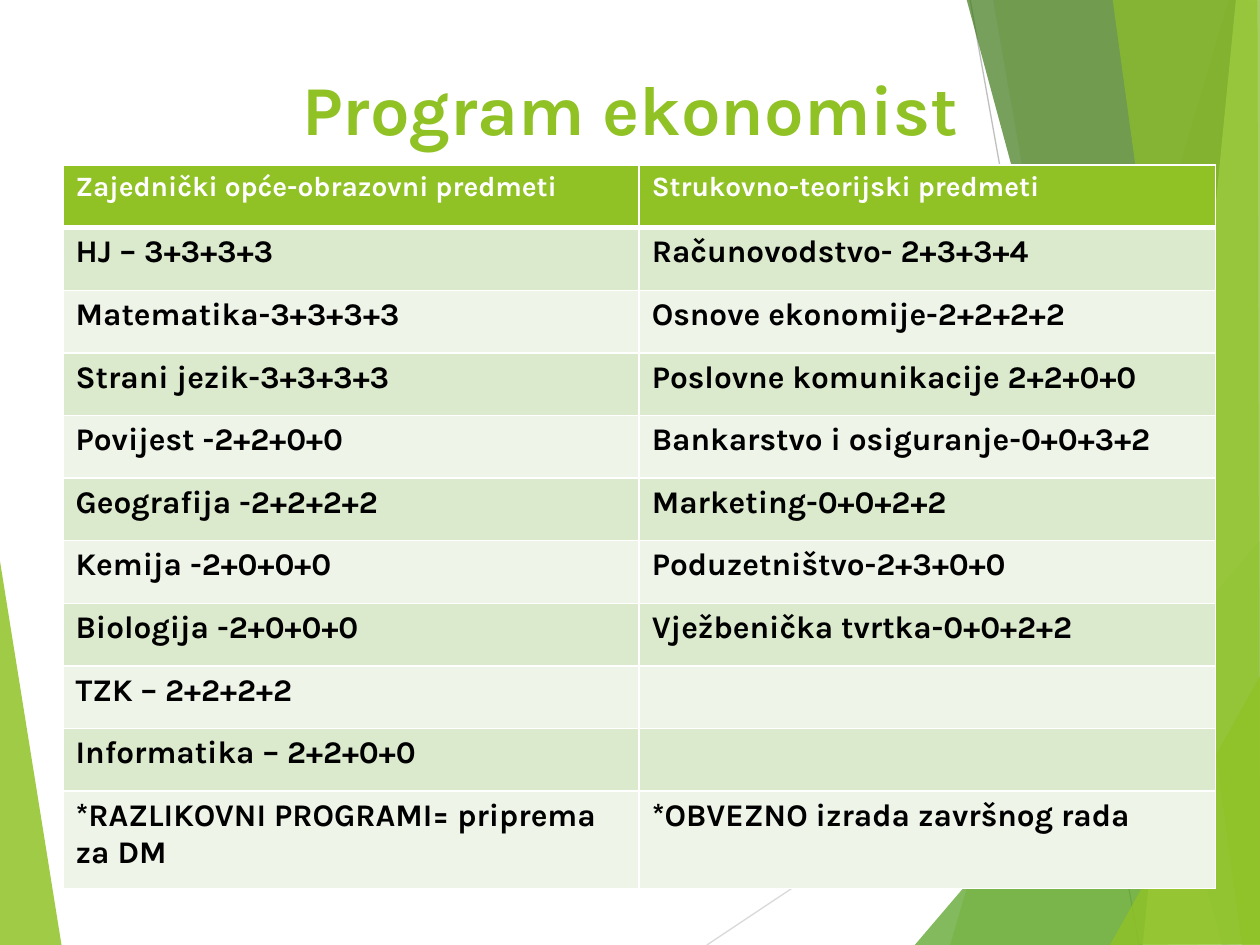
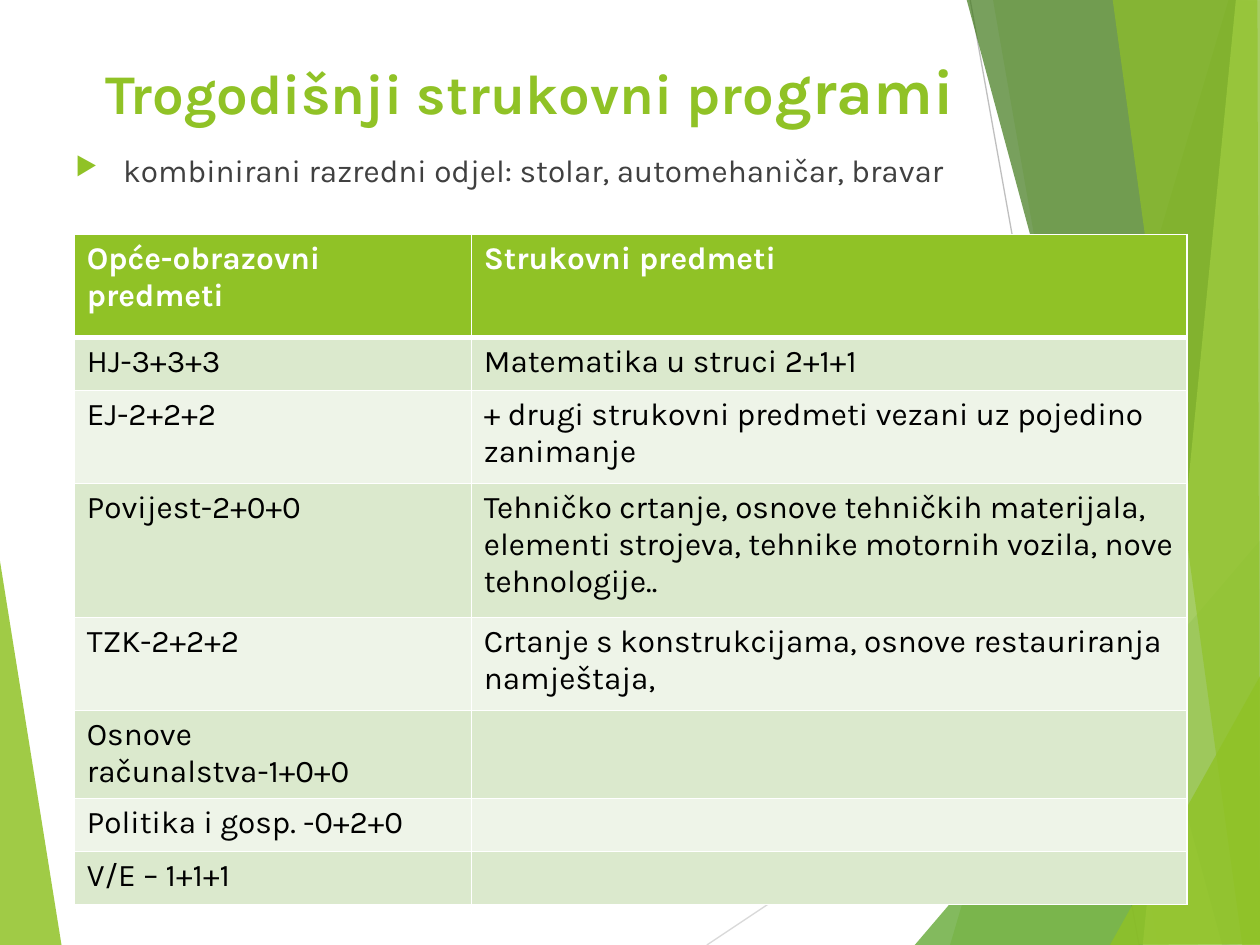
from dataclasses import dataclass

from lxml import etree
from pptx import Presentation
from pptx.dml.color import RGBColor
from pptx.enum.shapes import MSO_CONNECTOR
from pptx.enum.text import MSO_ANCHOR, MSO_AUTO_SIZE, PP_ALIGN
from pptx.oxml.ns import qn
from pptx.util import Inches, Pt

STRAIGHT = MSO_CONNECTOR.STRAIGHT
TOP = MSO_ANCHOR.TOP
NO_AUTOFIT = MSO_AUTO_SIZE.NONE
CENTER = PP_ALIGN.CENTER

# The slide is a grid of 100 columns by 75 rows; every length counts cells.
WIDTH, HEIGHT = Inches(10), Inches(7.5)
CELL = WIDTH / 100
TITLE_ONLY = 5

FONT = "Karla"
GREEN, MID_GREEN, DARK_GREEN, PALE_GREEN = "90C226", "54A021", "3F7819", "C0E474"
BAND_FILLS = ("EEF4E8", "DBE9CD")
WHITE, BLACK, BODY_GRAY = "FFFFFF", "000000", "404040"


@dataclass(frozen=True)
class Facet:
    points: tuple[tuple[float, float], ...]
    color: str
    opacity: int


@dataclass(frozen=True)
class Ray:
    start: tuple[float, float]
    end: tuple[float, float]
    color: str


@dataclass(frozen=True)
class Subjects:
    """A table of subjects: its place on the grid, its cells and their format."""
    left: float
    top: float
    columns: tuple[float, ...]
    rows: tuple[float, ...]
    cells: tuple[tuple[str, str], ...]
    header_size: int
    body_bold: bool


DECORATION = (
    Facet(((-0.1, 43.9), (4.9, 75.1), (-0.1, 75)), GREEN, 85),
    Ray((56.1, 75), (100.1, 45.7), "D9D9D9"),
    Ray((77, 0), (90.4, 75), "BFBFBF"),
    Facet(((97.5, 0), (75.4, 75), (100.2, 75.1), (100.1, 0.1)), GREEN, 30),
    Facet(((78.8, -0.1), (91.9, 75), (100.1, 75), (100.1, -0.1)), GREEN, 20),
    Facet(((72.6, 75), (100, 42.9), (100.1, 75)), MID_GREEN, 72),
    Facet(((76.7, -0.1), (97, 75), (100.1, 74.9), (100.1, -0.1)), DARK_GREEN, 70),
    Facet(((98.1, -0.1), (90.7, 75), (100.1, 75), (100, -0.1)), PALE_GREEN, 70),
    Facet(((88.3, -0.1), (98.6, 75), (100, 75), (99.8, -0.1)), GREEN, 65),
    Facet(((88.1, 75), (100.1, 53.5), (100.1, 74.9)), GREEN, 80),
)

ECONOMIST = Subjects(
    left=5, top=13.1, columns=(45.73, 45.73), rows=(4.97,) * 10 + (7.75,),
    header_size=16, body_bold=True,
    cells=(
        ("Zajednički opće-obrazovni predmeti", "Strukovno-teorijski predmeti"),
        ("HJ – 3+3+3+3", "Računovodstvo- 2+3+3+4"),
        ("Matematika-3+3+3+3", "Osnove ekonomije-2+2+2+2"),
        ("Strani jezik-3+3+3+3", "Poslovne komunikacije 2+2+0+0"),
        ("Povijest -2+2+0+0", "Bankarstvo i osiguranje-0+0+3+2"),
        ("Geografija -2+2+2+2", "Marketing-0+0+2+2"),
        ("Kemija -2+0+0+0", "Poduzetništvo-2+3+0+0"),
        ("Biologija -2+0+0+0", "Vježbenička tvrtka-0+0+2+2"),
        ("TZK – 2+2+2+2", ""),
        ("Informatika – 2+2+0+0", ""),
        ("*RAZLIKOVNI PROGRAMI= priprema za DM", "*OBVEZNO izrada završnog rada"),
    ),
)

VOCATIONAL = Subjects(
    left=5.9, top=18.6, columns=(31.5, 56.8),
    rows=(8.2, 4.2, 7.4, 10.6, 7.4, 4.2, 4.2, 4.2),
    header_size=18, body_bold=False,
    cells=(
        ("Opće-obrazovni predmeti", "Strukovni predmeti"),
        ("HJ-3+3+3", "Matematika u struci 2+1+1"),
        ("EJ-2+2+2", "+ drugi strukovni predmeti vezani uz pojedino zanimanje"),
        ("Povijest-2+0+0", "Tehničko crtanje, osnove tehničkih materijala, elementi "
                           "strojeva, tehnike motornih vozila, nove tehnologije.."),
        ("TZK-2+2+2", "Crtanje s konstrukcijama, osnove restauriranja namještaja,"),
        ("Osnove računalstva-1+0+0", ""),
        ("Politika i gosp. -0+2+0", ""),
        ("V/E – 1+1+1", ""),
    ),
)


def grid(*cells: float) -> tuple[int, ...]:
    return tuple(round(cell * CELL) for cell in cells)


def rgb(color: str) -> RGBColor:
    return RGBColor.from_string(color)


def add_xml(parent, tag: str, **attributes: str):
    return etree.SubElement(parent, qn(tag), attributes)


def write(paragraph, text: str, *, size: int, color: str, bold: bool = False) -> None:
    run = paragraph.add_run()
    run.text = text
    run.font.name = FONT
    run.font.size = Pt(size)
    run.font.bold = bold
    run.font.color.rgb = rgb(color)


def draw_facet(slide, facet: Facet):
    first, *others = [grid(*point) for point in facet.points]
    builder = slide.shapes.build_freeform(*first)
    builder.add_line_segments(others, close=True)
    shape = builder.convert_to_shape()
    shape.shadow.inherit = False
    shape.line.fill.background()
    shape.fill.solid()
    shape.fill.fore_color.rgb = rgb(facet.color)
    color = shape.element.xpath("./p:spPr/a:solidFill/a:srgbClr")[0]
    add_xml(color, "a:alpha", val=str(facet.opacity * 1000))
    return shape


def draw_ray(slide, ray: Ray):
    connector = slide.shapes.add_connector(STRAIGHT, *grid(*ray.start, *ray.end))
    connector.line.color.rgb = rgb(ray.color)
    connector.line.width = Pt(0.75)
    add_xml(connector.element.spPr, "a:effectLst")
    return connector


def decorate_layout(slide) -> None:
    """Draw the facets and rays on a slide, then move them to its layout."""
    for number, part in enumerate(DECORATION, start=100):
        shape = draw_facet(slide, part) if isinstance(part, Facet) else draw_ray(slide, part)
        shape.element.xpath(".//p:cNvPr")[0].set("id", str(number))
        slide.slide_layout.shapes.element.append(shape.element)


def set_title(slide, box: tuple[float, ...], *pieces: tuple[str, int]) -> None:
    title = slide.shapes.title
    title.left, title.top, title.width, title.height = grid(*box)
    frame = title.text_frame
    frame.word_wrap = True
    frame.auto_size = NO_AUTOFIT
    frame.vertical_anchor = TOP
    paragraph = frame.paragraphs[0]
    paragraph.alignment = CENTER
    for text, size in pieces:
        write(paragraph, text, size=size, color=GREEN, bold=True)


def add_bullet(slide, box: tuple[float, ...], text: str) -> None:
    frame = slide.shapes.add_textbox(*grid(*box)).text_frame
    frame.word_wrap = True
    paragraph = frame.paragraphs[0]
    paragraph.space_before = Pt(10)
    write(paragraph, text, size=18, color=BODY_GRAY)
    properties = paragraph.runs[0].font and frame.paragraphs[0]._p.get_or_add_pPr()
    indent = Inches(0.38)
    properties.set("marL", str(indent))
    properties.set("indent", str(-indent))
    add_xml(add_xml(properties, "a:buClr"), "a:srgbClr", val=GREEN)
    add_xml(properties, "a:buSzPct", val="80000")
    add_xml(properties, "a:buChar", char="▶")


def set_borders(cell, *, top: float, bottom: float) -> None:
    """Give a cell white borders; they must precede its fill."""
    properties = cell._tc.get_or_add_tcPr()
    widths = {"a:lnL": 1, "a:lnR": 1, "a:lnT": top, "a:lnB": bottom}
    for position, (tag, width) in enumerate(widths.items()):
        border = add_xml(properties, tag, w=str(Pt(width)))
        add_xml(add_xml(border, "a:solidFill"), "a:srgbClr", val=WHITE)
        properties.insert(position, border)


def add_subjects(slide, subjects: Subjects) -> None:
    box = grid(subjects.left, subjects.top, sum(subjects.columns), sum(subjects.rows))
    table = slide.shapes.add_table(
        len(subjects.rows), len(subjects.columns), *box).table
    for column, width in zip(table.columns, grid(*subjects.columns)):
        column.width = width
    for row, height in zip(table.rows, grid(*subjects.rows)):
        row.height = height
    for row_number, texts in enumerate(subjects.cells):
        header = row_number == 0
        for column_number, text in enumerate(texts):
            cell = table.cell(row_number, column_number)
            cell.fill.solid()
            cell.fill.fore_color.rgb = rgb(GREEN if header else BAND_FILLS[row_number % 2])
            set_borders(cell, top=3 if row_number == 1 else 1, bottom=3 if header else 1)
            if text:
                write(cell.text_frame.paragraphs[0], text,
                      size=subjects.header_size if header else 18,
                      color=WHITE if header else BLACK,
                      bold=header or subjects.body_bold)


def main() -> None:
    presentation = Presentation()
    presentation.slide_width, presentation.slide_height = WIDTH, HEIGHT
    layout = presentation.slide_layouts[TITLE_ONLY]

    economist = presentation.slides.add_slide(layout)
    decorate_layout(economist)
    set_title(economist, (5, 4.7, 90, 7.6), ("Program ekonomist", 40))
    add_subjects(economist, ECONOMIST)

    vocational = presentation.slides.add_slide(layout)
    set_title(vocational, (5, 3.6, 74.1, 9.6),
              ("Trogodišnji strukovni pro", 32), ("grami", 36))
    add_bullet(vocational, (5, 11.5, 90, 57.7),
               "kombinirani razredni odjel: stolar, automehaničar, bravar")
    add_subjects(vocational, VOCATIONAL)

    presentation.save("out.pptx")


if __name__ == "__main__":
    main()
